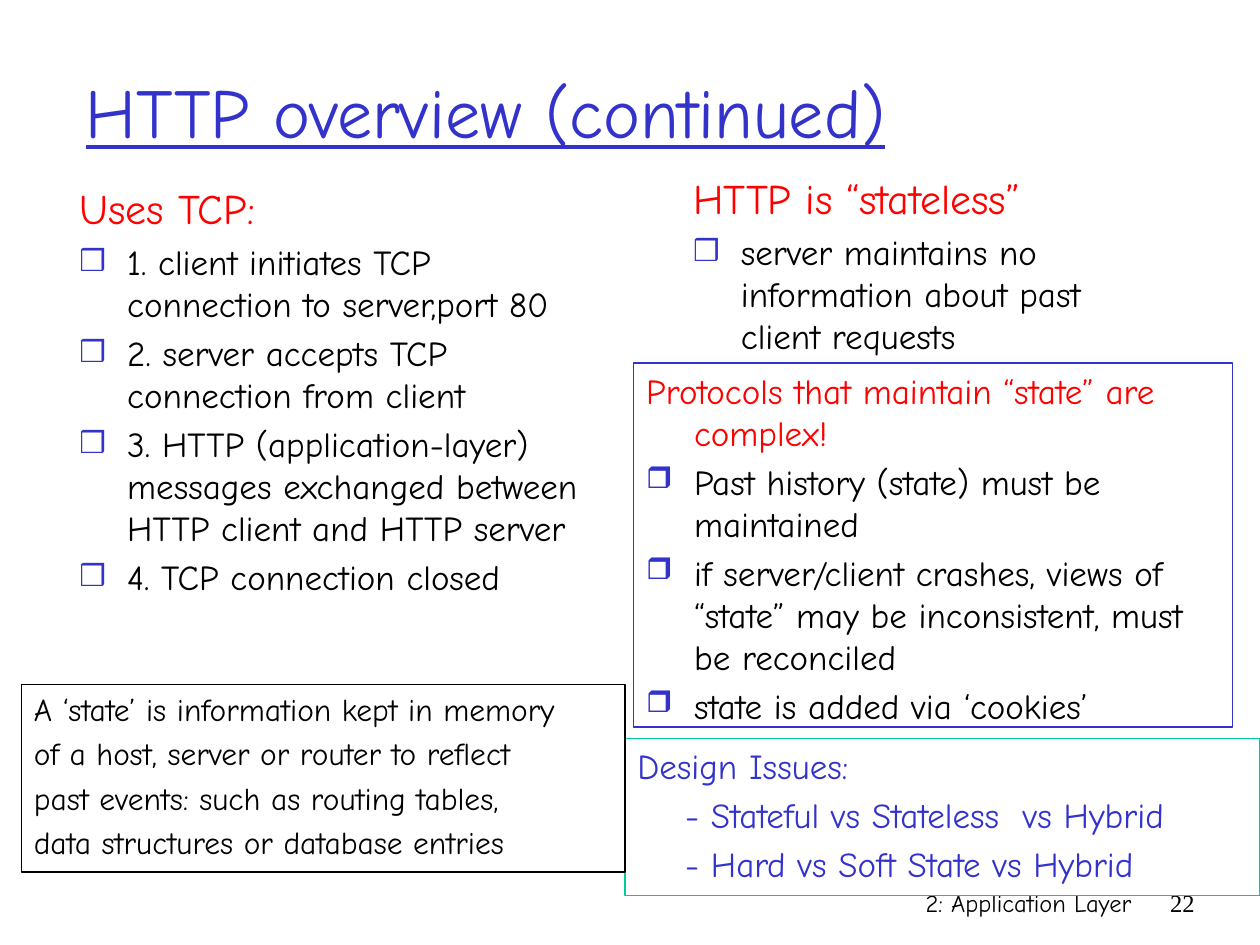
from lxml.etree import SubElement
from pptx import Presentation
from pptx.dml.color import RGBColor
from pptx.enum.shapes import MSO_SHAPE as Shape
from pptx.enum.text import MSO_ANCHOR as Anchor, MSO_AUTO_SIZE as AutoSize, PP_ALIGN as Align
from pptx.oxml.ns import qn
from pptx.util import Inches, Pt

BLUE, RED, BLACK, GREEN = "3333CC", "FF0000", "000000", "00CC99"
FONT = "Comic Neue"
INDENT = 0.38


def color(hex_string):
    return RGBColor.from_string(hex_string)


def place(shape, box):
    for name, value in zip(("left", "top", "width", "height"), box):
        setattr(shape, name, Inches(value))


def prepare_frame(shape, anchor=Anchor.TOP):
    frame = shape.text_frame
    settings = {"word_wrap": True, "auto_size": AutoSize.NONE, "vertical_anchor": anchor}
    for name, value in settings.items():
        setattr(frame, name, value)
    return frame


def write(paragraph, text, size, ink, align=Align.LEFT, font=FONT, underline=False):
    run = paragraph.add_run()
    run.text = text
    paragraph.alignment = align
    settings = {"name": font, "size": Pt(size), "underline": underline}
    for name, value in settings.items():
        setattr(run.font, name, value)
    run.font.color.rgb = color(ink)


def set_indent(paragraph, style):
    """Hang the first line, add the bullet of a list item, or indent the whole paragraph."""
    properties = paragraph._p.get_or_add_pPr()
    properties.set("marL", str(Inches(INDENT)))
    properties.set("indent", str(0 if style == "sub" else -Inches(INDENT)))
    if style != "bullet":
        SubElement(properties, qn("a:buNone"))
        return
    bullet_color = SubElement(properties, qn("a:buClr"))
    SubElement(bullet_color, qn("a:srgbClr"), val=BLUE)
    SubElement(properties, qn("a:buSzPct"), val="85000")
    SubElement(properties, qn("a:buChar"), char="❒")


def write_list(shape, items):
    """Fill a shape with (text, size, colour, style) paragraphs."""
    frame = prepare_frame(shape)
    for index, (text, size, ink, style) in enumerate(items):
        paragraph = frame.add_paragraph() if index else frame.paragraphs[0]
        paragraph.space_before = Pt(size * 0.2)
        set_indent(paragraph, style)
        write(paragraph, text, size, ink)


def headed_list(heading, size, bullets):
    return [(heading, size, RED, "plain")] + [(text, 20, BLACK, "bullet") for text in bullets]


def fill_title(title, box, text):
    place(title, box)
    write(prepare_frame(title, Anchor.MIDDLE).paragraphs[0], text, 40, BLUE, underline=True)


def fill_column(body, box, items):
    place(body, box)
    write_list(body, items)


def add_framed_list(slide, box, border, items):
    shape = slide.shapes.add_shape(Shape.RECTANGLE, *map(Inches, box))
    shape.shadow.inherit = False
    shape.fill.background()
    shape.line.color.rgb = color(border)
    shape.line.width = Pt(0.75)
    write_list(shape, items)


def add_footer(slide, box, label, number):
    left, top, width, height = box
    number_width = 0.5
    label_width = width - number_width
    parts = [(left, label_width, label, FONT),
             (left + label_width, number_width, number, "Times New Roman")]
    for part_left, part_width, text, font in parts:
        shape = slide.shapes.add_textbox(*map(Inches, (part_left, top, part_width, height)))
        write(prepare_frame(shape).paragraphs[0], text, 14, BLACK, Align.RIGHT, font)


def main():
    presentation = Presentation()
    presentation.slide_width, presentation.slide_height = Inches(10), Inches(7.5)
    slide = presentation.slides.add_slide(presentation.slide_layouts.get_by_name("Two Content"))
    title, left_body, right_body = slide.placeholders

    add_footer(slide, (5.92, 7, 3.66, 0.5), "2: Application Layer", "22")
    fill_title(title, (0.58, 0.25, 8.5, 1.25), "HTTP overview (continued)")
    fill_column(left_body, (0.53, 1.4, 4.34, 5.08), headed_list("Uses TCP:", 24, [
        "1. client initiates TCP connection to server,port 80",
        "2. server accepts TCP connection from client",
        "3. HTTP (application-layer) messages exchanged between HTTP client and HTTP server",
        "4. TCP connection closed",
    ]))
    fill_column(right_body, (5.4, 1.32, 3.47, 1.66), headed_list("HTTP is “stateless”", 24, [
        "server maintains no information about past client requests",
    ]))
    add_framed_list(slide, (5.03, 2.88, 4.75, 2.89), BLUE, headed_list(
        "Protocols that maintain “state” are complex!", 20, [
            "Past history (state) must be maintained",
            "if server/client crashes, views of “state” may be inconsistent, must be reconciled",
            "state is added via ‘cookies’",
        ]))
    add_framed_list(slide, (4.96, 5.86, 5.04, 1.25), GREEN, [
        ("Design Issues:", 20, BLUE, "plain"),
        ("- Stateful vs Stateless  vs Hybrid", 20, BLUE, "sub"),
        ("- Hard vs Soft State vs Hybrid", 20, BLUE, "sub"),
    ])
    add_framed_list(slide, (0.17, 5.43, 4.79, 1.49), BLACK, [(text, 18, BLACK, "plain") for text in (
        "A ‘state’ is information kept in memory",
        "of a host, server or router to reflect",
        "past events: such as routing tables,",
        "data structures or database entries",
    )])
    presentation.save("out.pptx")


if __name__ == "__main__":
    main()
